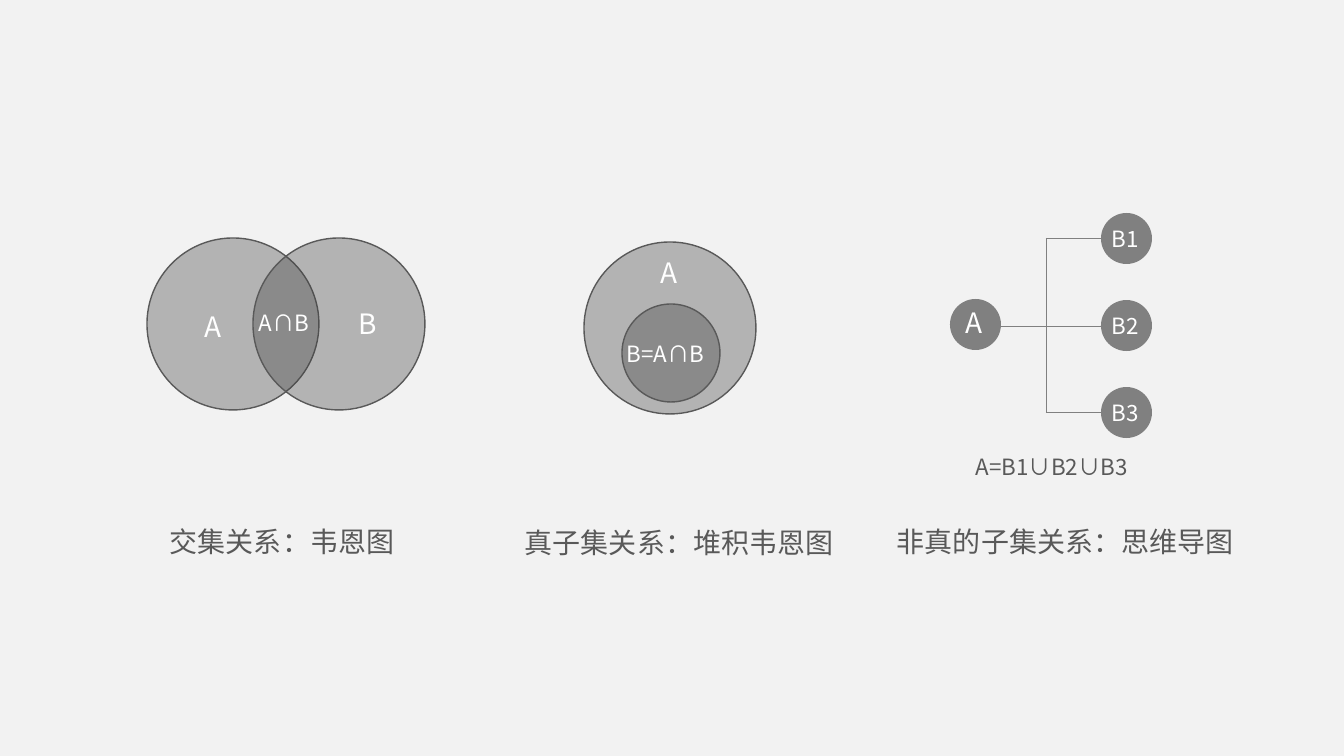
"""Build a slide of three set relations: Venn, stacked Venn and mind map."""
from dataclasses import dataclass
from typing import Optional

from lxml.etree import SubElement
from pptx import Presentation
from pptx.dml.color import RGBColor
from pptx.enum.shapes import MSO_CONNECTOR, MSO_SHAPE
from pptx.enum.text import MSO_AUTO_SIZE
from pptx.oxml.ns import qn
from pptx.util import Emu, Pt

SLIDE_W, SLIDE_H = 1344, 756
EMU_PER_PX = 12192000 / SLIDE_W
FONT = "Noto Sans CJK SC"
PAPER = RGBColor(0xF2, 0xF2, 0xF2)
DARK = RGBColor(0x40, 0x40, 0x40)
INK = RGBColor(0x59, 0x59, 0x59)
GRAY = RGBColor(0x80, 0x80, 0x80)
WHITE = RGBColor(0xFF, 0xFF, 0xFF)

NODE = 51
BRANCH_X, BRANCH_Y, BRANCH_STEP = 1101, 213, 87
TRUNK_X, TRUNK_TOP, TRUNK_MID, TRUNK_BOTTOM = 1046, 238, 326, 412


@dataclass(frozen=True)
class Circle:
    """A circle; an opacity marks an outlined, translucent set."""
    x: int
    y: int
    size: int
    fill: RGBColor = GRAY
    opacity: Optional[int] = None


@dataclass(frozen=True)
class Line:
    """A straight line of the mind map."""
    x1: int
    y1: int
    x2: int
    y2: int


@dataclass(frozen=True)
class Label:
    """A single-line text."""
    text: str
    x: int
    y: int
    w: int
    size: int = 20
    color: RGBColor = WHITE


SETS = [Circle(x, y, size, DARK, 35) for x, y, size in (
    (147, 238, 172), (253, 238, 172), (584, 242, 172), (622, 304, 98))]
NODES = [Circle(950, 299, NODE)] + [
    Circle(BRANCH_X, BRANCH_Y + i * BRANCH_STEP, NODE) for i in range(3)]
LINES = [
    Line(TRUNK_X, TRUNK_TOP, TRUNK_X, TRUNK_BOTTOM),
    Line(TRUNK_X, TRUNK_TOP, BRANCH_X, TRUNK_TOP),
    Line(997, TRUNK_MID, BRANCH_X, TRUNK_MID),
    Line(TRUNK_X, TRUNK_BOTTOM, BRANCH_X, TRUNK_BOTTOM),
]
LABELS = [
    Label("交集关系：韦恩图", 160, 520, 247, color=INK),
    Label("真子集关系：堆积韦恩图", 515, 521, 332, color=INK),
    Label("非真的子集关系：思维导图", 887, 520, 360, color=INK),
    Label("A", 195, 305, 39),
    Label("B", 349, 302, 41),
    Label("A∩B", 249, 304, 76, 16),
    Label("A", 651, 251, 39),
    Label("B=A∩B", 617, 335, 106, 16),
    Label("A", 956, 301, 39),
    *(Label(f"B{i + 1}", BRANCH_X + 1, BRANCH_Y + 7 + i * BRANCH_STEP, NODE, 16)
      for i in range(3)),
    Label("A=B1∪B2∪B3", 966, 448, 186, 16, INK),
]


def px(n: int) -> Emu:
    """Turn pixels into EMU."""
    return Emu(round(n * EMU_PER_PX))


def add_circle(s, c: Circle) -> None:
    """Draw a set or a node."""
    sp = s.shapes.add_shape(MSO_SHAPE.OVAL, px(c.x), px(c.y), px(c.size), px(c.size))
    sp.shadow.inherit = False
    sp.fill.solid()
    sp.fill.fore_color.rgb = c.fill
    if c.opacity is None:
        sp.line.fill.background()
        return
    sp.line.color.rgb = INK
    sp.line.width = Pt(1)
    color = sp._element.spPr.find(qn("a:solidFill")).find(qn("a:srgbClr"))
    SubElement(color, qn("a:alpha")).set("val", str(c.opacity * 1000))


def add_line(s, ln: Line) -> None:
    """Draw a thin line of the mind map."""
    cx = s.shapes.add_connector(
        MSO_CONNECTOR.STRAIGHT, px(ln.x1), px(ln.y1), px(ln.x2), px(ln.y2))
    cx.line.color.rgb = GRAY
    cx.line.width = Pt(0.5)
    SubElement(cx._element.spPr, qn("a:effectLst"))


def add_text(s, text: str, *, x: int, y: int, w: int, size: int, color: RGBColor) -> None:
    """Place an unwrapped line of text."""
    height = 44 if size == 20 else 37
    tf = s.shapes.add_textbox(px(x), px(y), px(w), px(height)).text_frame
    tf.word_wrap = False
    tf.auto_size = MSO_AUTO_SIZE.SHAPE_TO_FIT_TEXT
    r = tf.paragraphs[0].add_run()
    r.text = text
    r.font.size = Pt(size)
    r.font.color.rgb = color
    r.font.name = FONT
    SubElement(r.font._element, qn("a:ea")).set("typeface", FONT)


def main() -> None:
    """Build and save the slide."""
    prs = Presentation()
    prs.slide_width, prs.slide_height = px(SLIDE_W), px(SLIDE_H)
    s = prs.slides.add_slide(prs.slide_layouts[6])
    s.background.fill.solid()
    s.background.fill.fore_color.rgb = PAPER
    for circle in SETS + NODES:
        add_circle(s, circle)
    for line in LINES:
        add_line(s, line)
    for lb in LABELS:
        add_text(s, lb.text, x=lb.x, y=lb.y, w=lb.w, size=lb.size, color=lb.color)
    prs.save("out.pptx")


if __name__ == "__main__":
    main()
